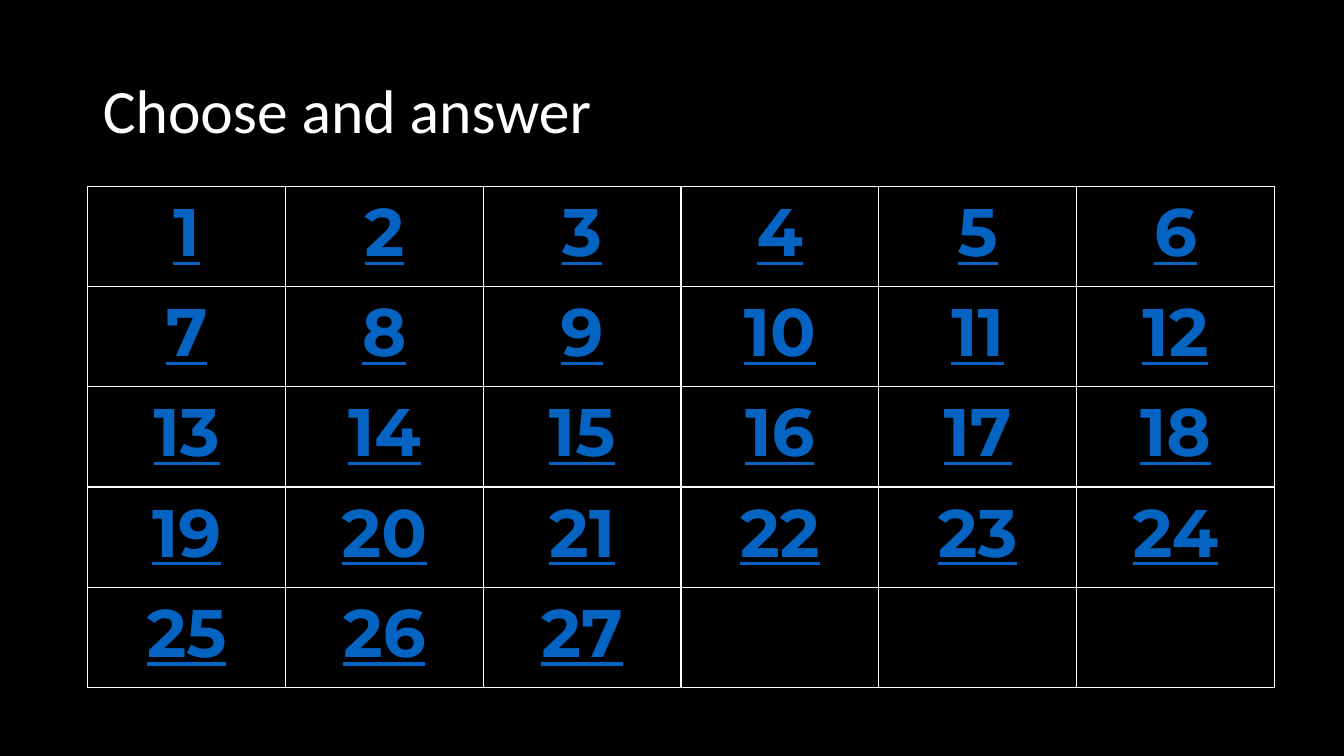
"""Build a slide with a numbered grid of questions to choose from."""
from lxml.etree import SubElement
from pptx import Presentation
from pptx.dml.color import RGBColor
from pptx.enum.text import MSO_ANCHOR as Anchor, PP_ALIGN as Align
from pptx.oxml.ns import qn
from pptx.util import Inches, Pt

ROWS, COLS, LAST = 5, 6, 27


def paint(fill, tint):
    fill.solid()
    fill.fore_color.rgb = RGBColor.from_string(tint)


def write(para, text, face, size, tint):
    run = para.add_run()
    run.text = text
    run.font.name = face
    run.font.size = Pt(size)
    paint(run.font.fill, tint)
    return run


deck = Presentation()
deck.slide_width, deck.slide_height = Inches(13.33), Inches(7.5)
slide = deck.slides.add_slide(deck.slide_layouts[5])
paint(slide.background.fill, "000000")

title = slide.shapes.title
title.left, title.top = Inches(0.92), Inches(0.4)
title.width, title.height = Inches(11.5), Inches(1.45)
frame = title.text_frame
frame.word_wrap = True
frame.vertical_anchor = Anchor.MIDDLE
head = frame.paragraphs[0]
head.alignment = Align.LEFT
head.line_spacing = 0.9
write(head, "Choose and answer", "Calibri", 44, "FFFFFF")

grid = slide.shapes.add_table(
    ROWS, COLS, Inches(0.87), Inches(1.85), Inches(11.77), Inches(4.97)
).table
grid.first_row = grid.horz_banding = False

for num, cell in enumerate(grid.iter_cells(), 1):
    props = cell._tc.get_or_add_tcPr()
    for side in ("lnL", "lnR", "lnT", "lnB"):
        line = SubElement(props, qn(f"a:{side}"), w=str(Pt(1)))
        fill = SubElement(line, qn("a:solidFill"))
        SubElement(fill, qn("a:srgbClr"), val="FFFFFF")
    cell.fill.background()
    if num <= LAST:
        para = cell.text_frame.paragraphs[0]
        para.alignment = Align.CENTER
        run = write(para, str(num), "Montserrat", 48, "0563C1")
        run.font.bold = run.font.underline = True

deck.save("out.pptx")
